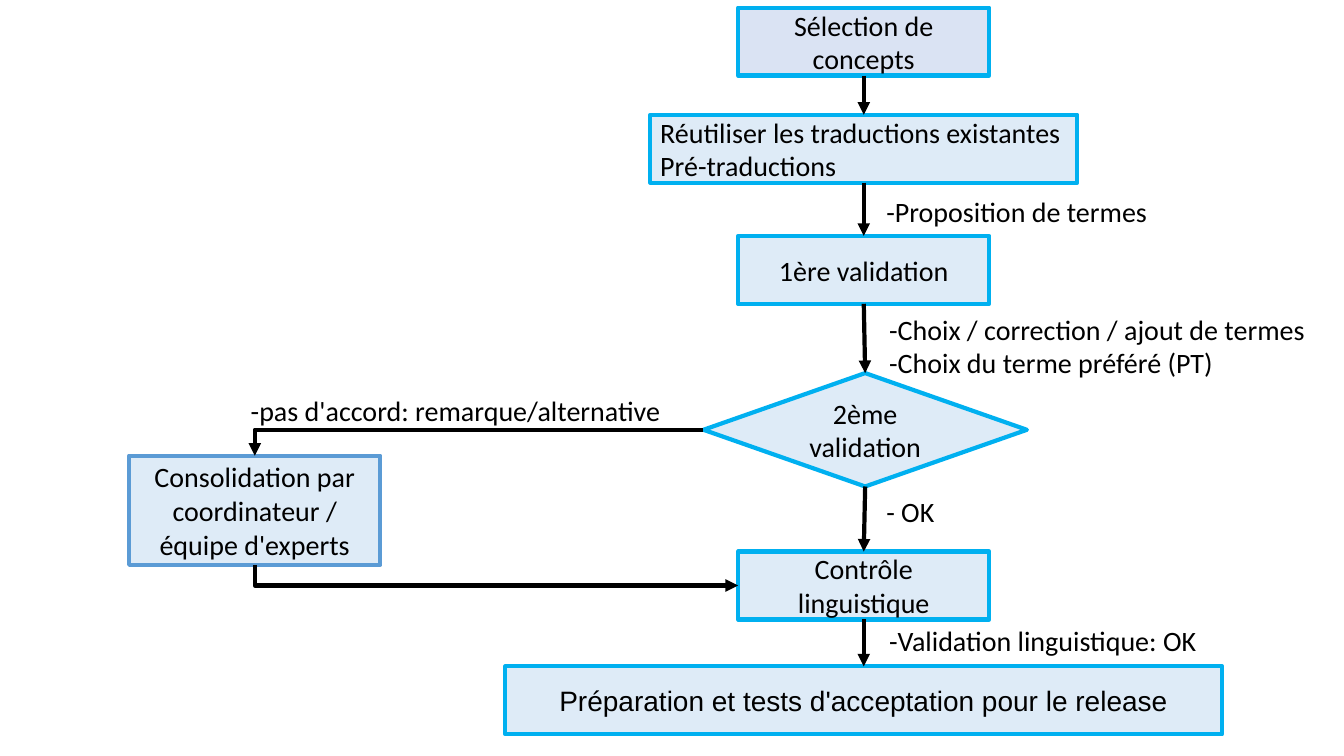
from lxml import etree
from pptx import Presentation
from pptx.dml.color import RGBColor
from pptx.enum.shapes import MSO_CONNECTOR, MSO_SHAPE
from pptx.enum.text import MSO_ANCHOR, MSO_AUTO_SIZE, PP_ALIGN
from pptx.oxml.ns import qn
from pptx.util import Pt

RECTANGLE, DECISION = MSO_SHAPE.RECTANGLE, MSO_SHAPE.FLOWCHART_DECISION
STRAIGHT, ELBOW = MSO_CONNECTOR.STRAIGHT, MSO_CONNECTOR.ELBOW
LEFT, CENTER = PP_ALIGN.LEFT, PP_ALIGN.CENTER
MIDDLE, GROW = MSO_ANCHOR.MIDDLE, MSO_AUTO_SIZE.SHAPE_TO_FIT_TEXT
TOP_SIDE, LEFT_SIDE, BOTTOM_SIDE = 0, 1, 2

BLACK = RGBColor(0x00, 0x00, 0x00)
CYAN = RGBColor(0x00, 0xB0, 0xF0)
BLUE = RGBColor(0x5B, 0x9B, 0xD5)
PALE_BLUE = RGBColor(0xDE, 0xEB, 0xF7)
PALE_INDIGO = RGBColor(0xDA, 0xE3, 0xF3)

AXIS = 617  # centre of the main column
STEP_WIDTH, STEP_HEIGHT = 179.5, 48.5


class Flowchart:
    """Draws the elements of a flowchart on one slide; lengths in points."""

    font, size, line_width = "Calibri", 20, 3

    def __init__(self, page):
        self.page = page

    def add_lines(self, frame, lines, align, font=None):
        frame.word_wrap = True
        for index, line in enumerate(lines):
            para = frame.paragraphs[0] if index == 0 else frame.add_paragraph()
            para.alignment = align
            span = para.add_run()
            span.text = line
            span.font.name = font or self.font
            span.font.size = Pt(self.size)
            span.font.color.rgb = BLACK

    def step(self, lines, top, width=STEP_WIDTH, height=STEP_HEIGHT, center=AXIS,
             kind=RECTANGLE, fill=PALE_BLUE, border=CYAN, align=CENTER, font=None):
        box = self.page.shapes.add_shape(
            kind, Pt(center - width / 2), Pt(top), Pt(width), Pt(height))
        box.shadow.inherit = False
        box.fill.solid()
        box.fill.fore_color.rgb = fill
        box.line.color.rgb = border
        box.line.width = Pt(self.line_width)
        box.text_frame.vertical_anchor = MIDDLE
        self.add_lines(box.text_frame, lines, align, font)
        return box

    def label(self, lines, left, top, width):
        height = 7.2 + 24 * len(lines)
        box = self.page.shapes.add_textbox(Pt(left), Pt(top), Pt(width), Pt(height))
        box.text_frame.auto_size = GROW
        self.add_lines(box.text_frame, lines, LEFT)

    def arrow(self, source, target, start=BOTTOM_SIDE, end=TOP_SIDE, kind=STRAIGHT):
        arrow = self.page.shapes.add_connector(kind, 0, 0, 0, 0)
        arrow.begin_connect(source, start)
        arrow.end_connect(target, end)
        arrow.line.color.rgb = BLACK
        arrow.line.width = Pt(self.line_width)
        properties = arrow.element.spPr
        etree.SubElement(properties.find(qn("a:ln")), qn("a:tailEnd"), type="triangle")
        etree.SubElement(properties, qn("a:effectLst"))
        return arrow

    def corner_arrow(self, source, target, start, end):
        """Arrow with a single right-angle bend."""
        arrow = self.arrow(source, target, start, end, ELBOW)
        properties = arrow.element.spPr
        properties.find(qn("a:prstGeom")).set("prst", "bentConnector2")
        if start == BOTTOM_SIDE:  # goes down first: turn the frame a quarter
            left, top, width, height = arrow.left, arrow.top, arrow.width, arrow.height
            arrow.left = left + (width - height) // 2
            arrow.top = top + (height - width) // 2
            arrow.width, arrow.height = height, width
            frame = properties.find(qn("a:xfrm"))
            frame.set("rot", "16200000")
            frame.set("flipH", "1")


def main():
    deck = Presentation()
    deck.slide_width, deck.slide_height = Pt(960), Pt(540)
    chart = Flowchart(deck.slides.add_slide(deck.slide_layouts[6]))

    # Steps
    selection = chart.step(["Sélection de concepts"], 5.5, fill=PALE_INDIGO)
    reuse = chart.step(["Réutiliser les traductions existantes", "Pré-traductions"],
                       82, width=305, align=LEFT)
    first = chart.step(["1ère validation"], 168.5)
    second = chart.step(["2ème", "validation"], 266.5, width=231, height=81,
                        center=AXIS + 1, kind=DECISION)
    experts = chart.step(["Consolidation par coordinateur / équipe d'experts"],
                         325.5, height=78, center=182, border=BLUE)
    control = chart.step(["Contrôle linguistique"], 394)
    release = chart.step(["Préparation et tests d'acceptation pour le release"],
                         476, width=512, font="Arial")

    # Main flow
    flow = [selection, reuse, first, second, control, release]
    for source, target in zip(flow, flow[1:]):
        chart.arrow(source, target)

    # Detour through the experts
    chart.corner_arrow(second, experts, LEFT_SIDE, TOP_SIDE)
    chart.corner_arrow(experts, control, BOTTOM_SIDE, LEFT_SIDE)

    # Labels
    chart.label(["-Proposition de termes"], 626, 135.5, 273)
    chart.label(["-Choix / correction / ajout de termes",
                 "-Choix du terme préféré (PT)"], 628, 219.5, 334)
    chart.label(["-pas d'accord: remarque/alternative"], 172, 277.5, 318)
    chart.label(["- OK"], 626, 350, 273)
    chart.label(["-Validation linguistique: OK"], 628, 441.5, 294)

    deck.save("out.pptx")


if __name__ == "__main__":
    main()
